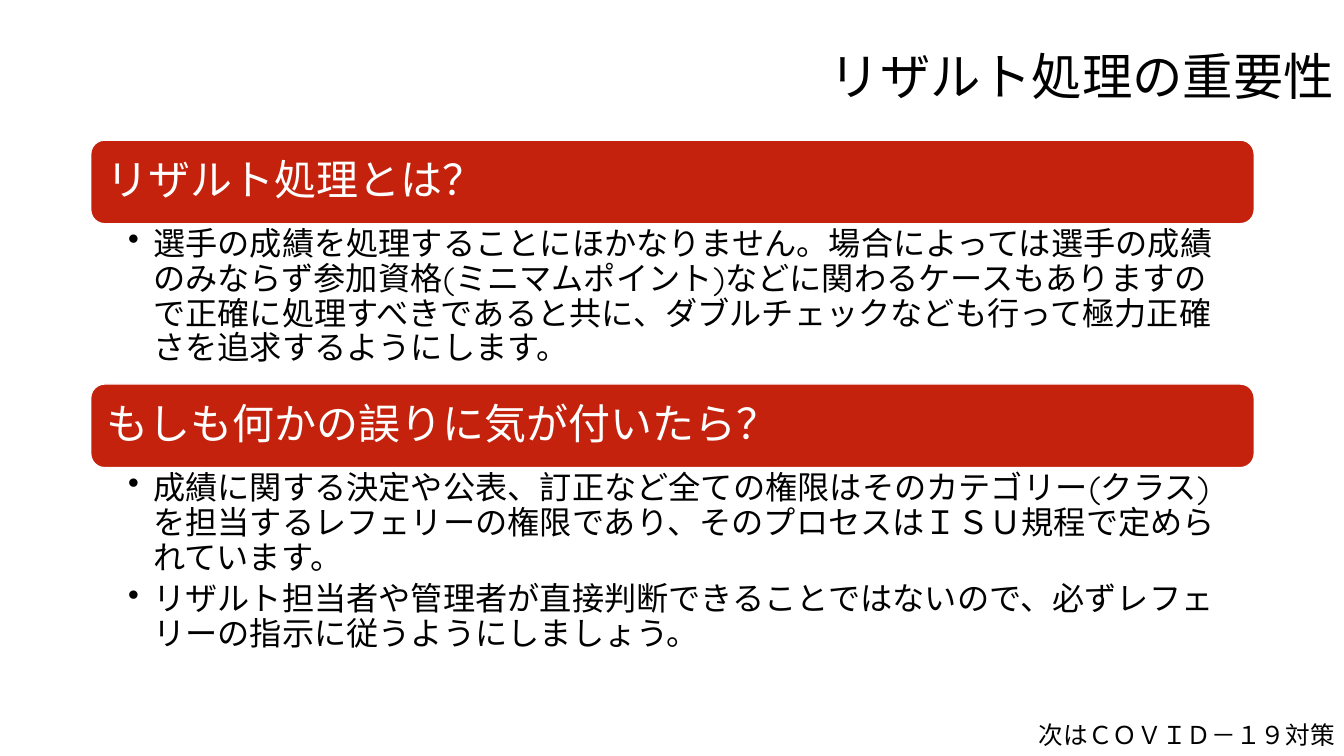
from lxml.etree import SubElement
from pptx import Presentation
from pptx.dml.color import RGBColor
from pptx.enum.shapes import MSO_SHAPE
from pptx.enum.text import MSO_ANCHOR, PP_ALIGN
from pptx.oxml.ns import qn
from pptx.util import Inches, Pt

FONT = "Quicksand"
BLACK, WHITE, RED = "000000", "FFFFFF", "C4220D"
LEFT, WIDTH, HEADING_HEIGHT = 0.9, 11.54, 0.83

SECTIONS = [
    (1.39, 1.6, "リザルト処理とは？", [
        "選手の成績を処理することにほかなりません。場合によっては選手の成績のみならず参加資格(ミニマムポイント)などに関わるケースもありますので正確に処理すべきであると共に、ダブルチェックなども行って極力正確さを追求するようにします。",
    ]),
    (3.81, 1.66, "もしも何かの誤りに気が付いたら？", [
        "成績に関する決定や公表、訂正など全ての権限はそのカテゴリー(クラス)を担当するレフェリーの権限であり、そのプロセスはＩＳＵ規程で定められています。",
        "リザルト担当者や管理者が直接判断できることではないので、必ずレフェリーの指示に従うようにしましょう。",
    ]),
]


def rgb(value):
    return RGBColor.from_string(value)


def set_insets(frame, left, top, right, bottom):
    frame.margin_left, frame.margin_right = Inches(left), Inches(right)
    frame.margin_top, frame.margin_bottom = Inches(top), Inches(bottom)


def write(frame, lines, size, color, align=PP_ALIGN.LEFT, anchor=MSO_ANCHOR.MIDDLE):
    frame.text = "\n".join(lines)
    frame.word_wrap = True
    frame.vertical_anchor = anchor
    for paragraph in frame.paragraphs:
        paragraph.alignment = align
        paragraph.line_spacing = 0.9
        for run in paragraph.runs:
            run.font.name = FONT
            run.font.size = Pt(size)
            run.font.color.rgb = rgb(color)


def add_bullet(paragraph):
    paragraph.space_after = Pt(5)
    properties = paragraph._p.get_or_add_pPr()
    properties.set("marL", str(Inches(0.25)))
    properties.set("indent", str(Inches(-0.25)))
    SubElement(properties, qn("a:buChar"), char="•")


def add_label(slide, left, top, width, height, text, size):
    label = slide.shapes.add_textbox(Inches(left), Inches(top), Inches(width), Inches(height))
    write(label.text_frame, [text], size, BLACK, PP_ALIGN.RIGHT)


def add_heading(slide, top, text):
    heading = slide.shapes.add_shape(
        MSO_SHAPE.ROUNDED_RECTANGLE,
        Inches(LEFT), Inches(top), Inches(WIDTH), Inches(HEADING_HEIGHT))
    heading.shadow.inherit = False
    heading.fill.solid()
    heading.fill.fore_color.rgb = rgb(RED)
    heading.line.color.rgb = rgb(WHITE)
    heading.line.width = Pt(1)
    write(heading.text_frame, [text], 30, WHITE)
    set_insets(heading.text_frame, 0.12, 0.12, 0.12, 0.12)


def add_points(slide, top, height, points):
    body = slide.shapes.add_textbox(Inches(LEFT), Inches(top), Inches(WIDTH), Inches(height))
    write(body.text_frame, points, 23, BLACK, anchor=MSO_ANCHOR.TOP)
    set_insets(body.text_frame, 0.37, 0.04, 0.23, 0.04)
    for paragraph in body.text_frame.paragraphs:
        add_bullet(paragraph)


def main():
    deck = Presentation()
    deck.slide_width, deck.slide_height = Inches(13.33), Inches(7.5)
    slide = deck.slides.add_slide(deck.slide_layouts[6])
    add_label(slide, 1.77, 0.49, 11.56, 0.6, "リザルト処理の重要性", 36)
    for top, height, heading, points in SECTIONS:
        add_heading(slide, top, heading)
        add_points(slide, top + HEADING_HEIGHT, height, points)
    add_label(slide, 7.66, 7.12, 5.68, 0.38, "次はＣＯＶＩＤ－１９対策", 17.6)
    deck.save("out.pptx")


if __name__ == "__main__":
    main()
